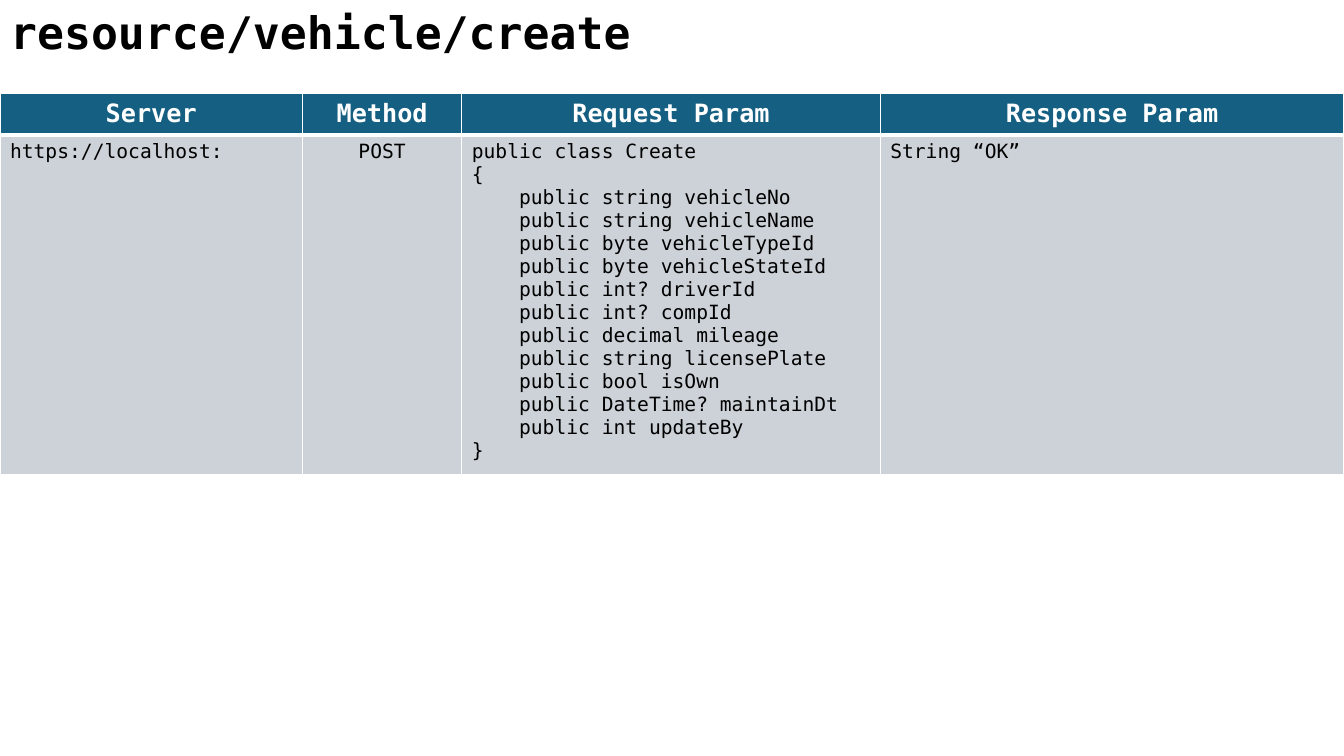
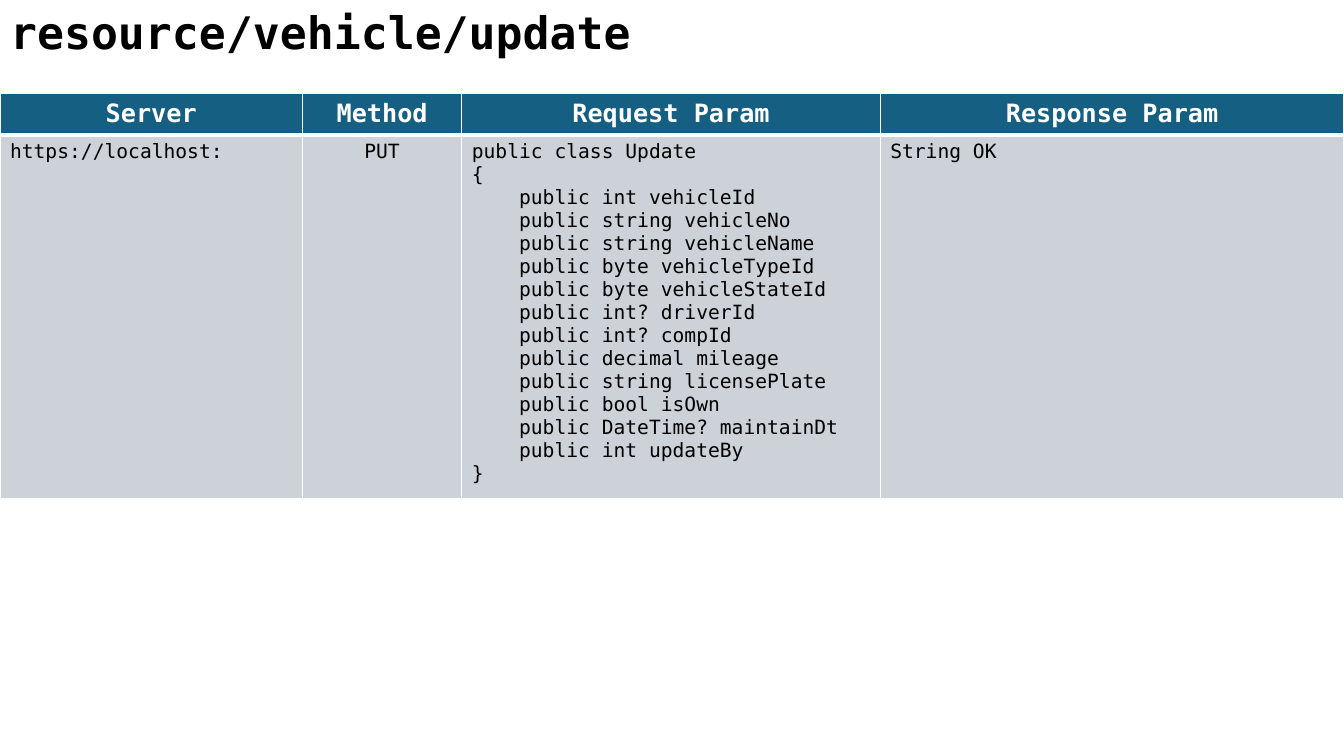
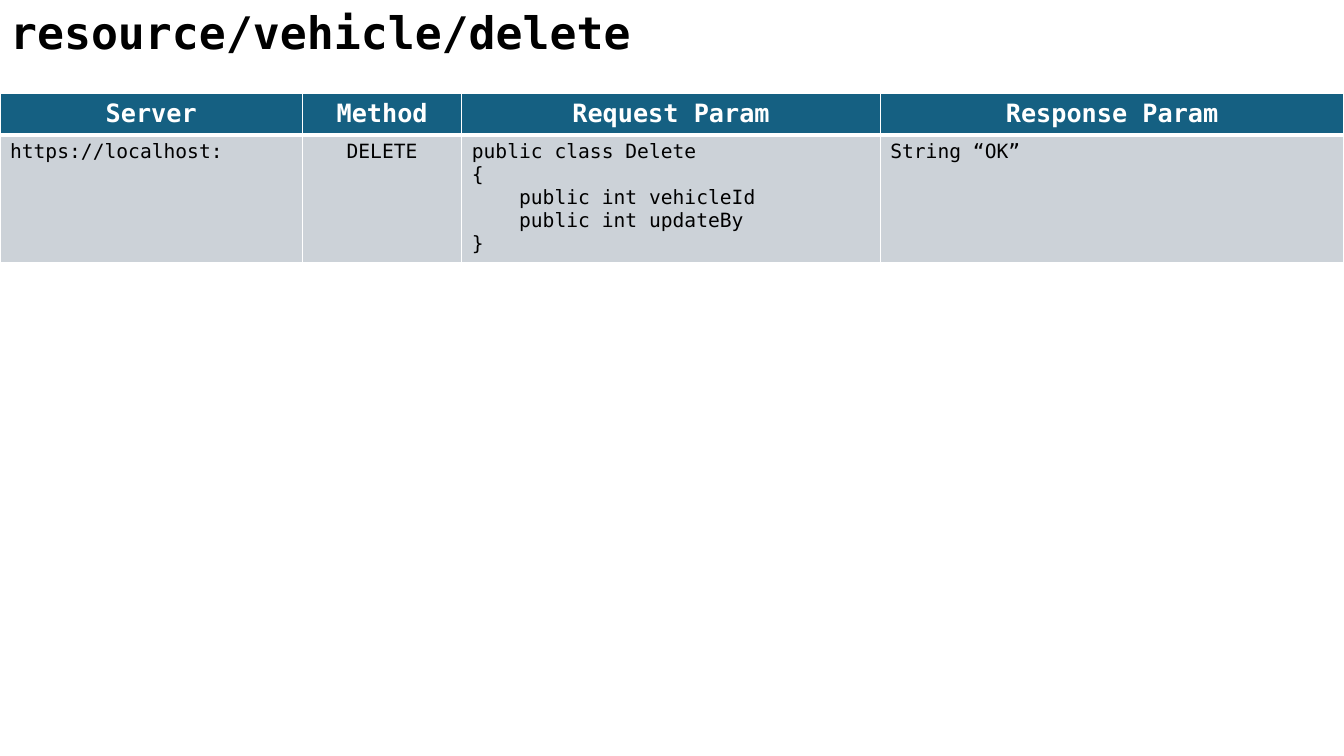
from dataclasses import dataclass

from lxml import etree
from pptx import Presentation
from pptx import util as u
from pptx.dml.color import RGBColor
from pptx.enum import text
from pptx.oxml import ns

# Shared style
FONT = "DejaVu Sans Mono"
BLACK = RGBColor(0x00, 0x00, 0x00)
WHITE = RGBColor(0xFF, 0xFF, 0xFF)
HEADER_FILL = RGBColor(0x15, 0x60, 0x82)
BODY_FILL = RGBColor(0xCC, 0xD2, 0xD8)
LEFT, CENTER = text.PP_ALIGN.LEFT, text.PP_ALIGN.CENTER

SLIDE_WIDTH, SLIDE_HEIGHT = 13.33, 7.5
TABLE_TOP = 0.93
HEADER_HEIGHT = 0.41
BODY_SIZE = 14
LINE_HEIGHT = BODY_SIZE * 1.2 / 72
CELL_PADDING = 0.1
THIN, THICK = 1, 3

HEADERS = ["Server", "Method", "Request Param", "Response Param"]
COLUMN_WIDTHS = [3, 1.58, 4.15, 4.6]
BODY_ALIGNS = [LEFT, CENTER, LEFT, LEFT]
SERVER = "https://localhost:"


@dataclass(frozen=True)
class Endpoint:
    action: str
    method: str
    fields: list[str]
    response: str

    def request_lines(self) -> list[str]:
        members = [f"    public {field}" for field in self.fields]
        return [f"public class {self.action.title()}", "{", *members, "}"]


VEHICLE_FIELDS = [
    "string vehicleNo",
    "string vehicleName",
    "byte vehicleTypeId",
    "byte vehicleStateId",
    "int? driverId",
    "int? compId",
    "decimal mileage",
    "string licensePlate",
    "bool isOwn",
    "DateTime? maintainDt",
]
KEY_FIELD = "int vehicleId"
EDITOR_FIELD = "int updateBy"

ENDPOINTS = [
    Endpoint("create", "POST", [*VEHICLE_FIELDS, EDITOR_FIELD], "String “OK”"),
    Endpoint("update", "PUT", [KEY_FIELD, *VEHICLE_FIELDS, EDITOR_FIELD], "String OK"),
    Endpoint("delete", "DELETE", [KEY_FIELD, EDITOR_FIELD], "String “OK”"),
]


def write_text(frame, lines: list[str], *, size: float, color: RGBColor = BLACK,
               bold: bool = False, align=LEFT) -> None:
    """Fill a text frame with one paragraph per line."""
    for index, line in enumerate(lines):
        para = frame.add_paragraph() if index else frame.paragraphs[0]
        para.alignment = align
        span = para.add_run()
        span.text = line
        span.font.name = FONT
        span.font.size = u.Pt(size)
        span.font.bold = bold
        span.font.color.rgb = color


def set_borders(cell, *, top: float, bottom: float) -> None:
    """Draw white borders on all four sides of a cell."""
    properties = cell._tc.get_or_add_tcPr()
    widths = {"lnL": THIN, "lnR": THIN, "lnT": top, "lnB": bottom}
    for side, width in widths.items():
        line = etree.SubElement(properties, ns.qn(f"a:{side}"), w=str(u.Pt(width)))
        fill = etree.SubElement(line, ns.qn("a:solidFill"))
        etree.SubElement(fill, ns.qn("a:srgbClr"), val=str(WHITE))


def fill_cell(cell, lines: list[str], *, fill: RGBColor, top: float = THIN,
              bottom: float = THIN, **text_format) -> None:
    set_borders(cell, top=top, bottom=bottom)
    cell.fill.solid()
    cell.fill.fore_color.rgb = fill
    write_text(cell.text_frame, lines, **text_format)


def add_title(page, title: str) -> None:
    box = page.shapes.title
    box.left, box.top = u.Inches(0), u.Inches(0)
    box.width, box.height = u.Inches(9.45), u.Inches(0.64)
    frame = box.text_frame
    frame.word_wrap = True
    frame.auto_size = text.MSO_AUTO_SIZE.SHAPE_TO_FIT_TEXT
    frame.vertical_anchor = text.MSO_ANCHOR.TOP
    write_text(frame, [title], size=32, bold=True)


def add_endpoint_table(page, endpoint: Endpoint) -> None:
    request = endpoint.request_lines()
    body_height = CELL_PADDING + len(request) * LINE_HEIGHT
    table = page.shapes.add_table(
        2, len(HEADERS), u.Inches(0), u.Inches(TABLE_TOP),
        u.Inches(SLIDE_WIDTH), u.Inches(HEADER_HEIGHT + body_height)).table
    table.horz_banding = False
    table.rows[0].height = u.Inches(HEADER_HEIGHT)
    table.rows[1].height = u.Inches(body_height)

    body = [[SERVER], [endpoint.method], request, [endpoint.response]]
    columns = zip(HEADERS, COLUMN_WIDTHS, BODY_ALIGNS, body)
    for index, (header, width, align, lines) in enumerate(columns):
        table.columns[index].width = u.Inches(width)
        fill_cell(table.cell(0, index), [header], fill=HEADER_FILL, bottom=THICK,
                  size=18, color=WHITE, bold=True, align=CENTER)
        fill_cell(table.cell(1, index), lines, fill=BODY_FILL, top=THICK,
                  size=BODY_SIZE, align=align)


def main() -> None:
    deck = Presentation()
    deck.slide_width = u.Inches(SLIDE_WIDTH)
    deck.slide_height = u.Inches(SLIDE_HEIGHT)
    title_only = deck.slide_layouts[5]

    # One slide per endpoint
    for endpoint in ENDPOINTS:
        page = deck.slides.add_slide(title_only)
        add_title(page, f"resource/vehicle/{endpoint.action}")
        add_endpoint_table(page, endpoint)

    deck.save("out.pptx")


if __name__ == "__main__":
    main()
